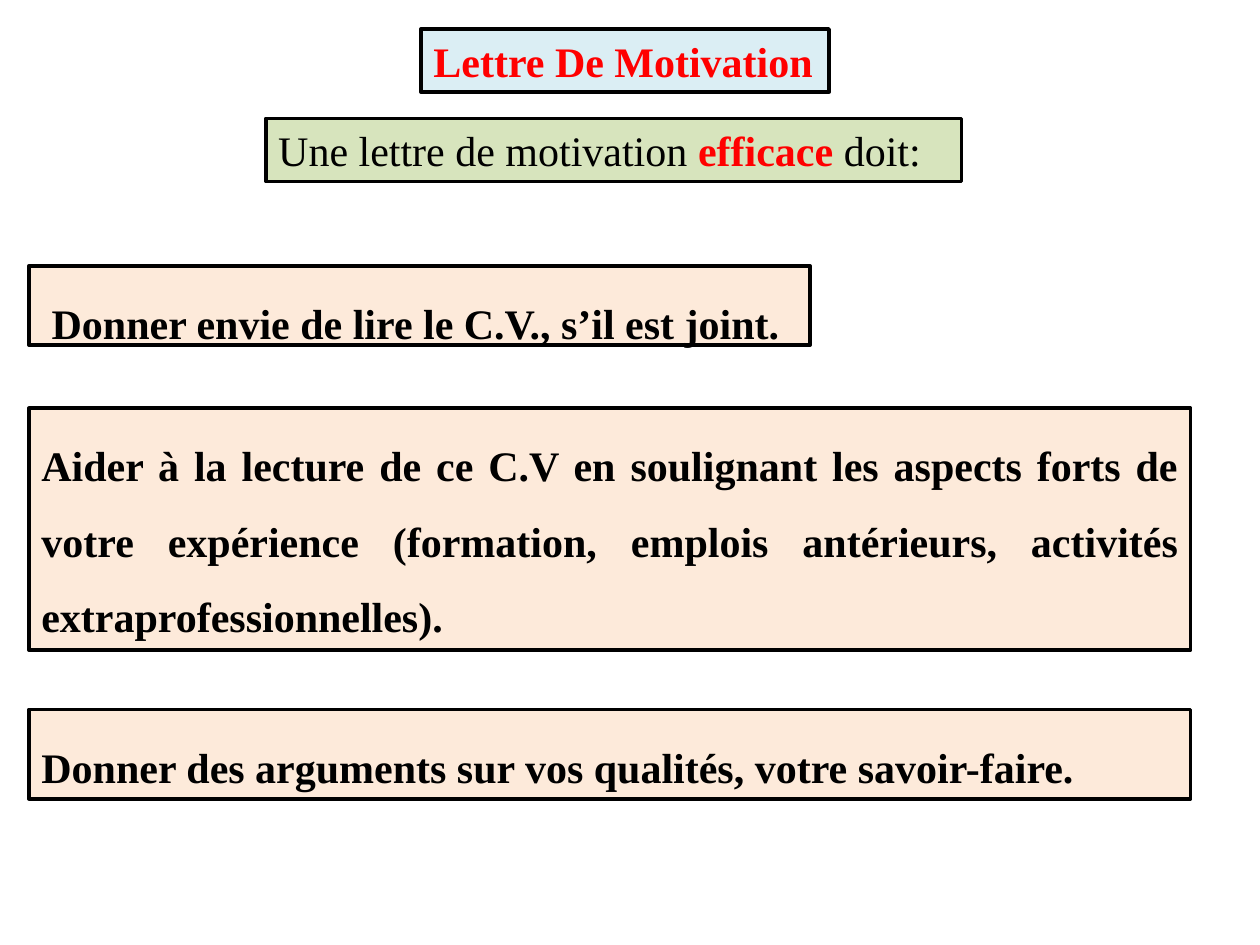
from pptx import Presentation
from pptx.dml.color import RGBColor
from pptx.enum.text import MSO_ANCHOR, MSO_AUTO_SIZE, PP_ALIGN
from pptx.util import Inches, Pt

FONT = "Times New Roman"
BLACK, RED = "000000", "FF0000"
BLUE, GREEN, PEACH = "DBEEF4", "D7E4BD", "FDEADA"
LEFT, WIDE = 0.23, 9.22
POINTS = [
    ((LEFT, 2.11, 6.2, 0.63), 0.18, MSO_ANCHOR.TOP,
     "Donner envie de lire le C.V., s’il est joint."),
    ((LEFT, 3.24, WIDE, 1.92), 0.1, MSO_ANCHOR.TOP,
     "Aider à la lecture de ce C.V en soulignant les aspects forts de votre "
     "expérience (formation, emplois antérieurs, activités extraprofessionnelles)."),
    ((LEFT, 5.63, WIDE, 0.71), 0.1, MSO_ANCHOR.MIDDLE,
     "Donner des arguments sur vos qualités, votre savoir-faire."),
]


def rgb(color):
    """Return the colour for a hex string."""
    return RGBColor.from_string(color)


def style_box(sp, box, fill, anchor=MSO_ANCHOR.MIDDLE, wrap=True):
    """Place a framed box and return its first paragraph."""
    sp.left, sp.top, sp.width, sp.height = (Inches(v) for v in box)
    sp.fill.solid()
    sp.fill.fore_color.rgb = rgb(fill)
    sp.line.color.rgb = rgb(BLACK)
    sp.line.width = Pt(2)
    tf = sp.text_frame
    tf.word_wrap = wrap
    tf.auto_size = MSO_AUTO_SIZE.NONE
    tf.vertical_anchor = anchor
    p = tf.paragraphs[0]
    p.alignment = PP_ALIGN.LEFT
    p.font.name = FONT
    p.font.size = Pt(24)
    return p


def add_text(p, text, color=BLACK, bold=False):
    """Append a run to a paragraph."""
    r = p.add_run()
    r.text = text
    r.font.color.rgb = rgb(color)
    r.font.bold = bold


def add_title(slide, box):
    """Fill the title placeholder."""
    p = style_box(slide.shapes.title, box, BLUE, wrap=False)
    add_text(p, "Lettre De Motivation", RED, True)


def add_subtitle(slide, box):
    """Add the introductory line."""
    p = style_box(slide.shapes.add_textbox(0, 0, 0, 0), box, GREEN)
    add_text(p, "Une lettre de motivation ")
    add_text(p, "efficace", RED, True)
    add_text(p, " doit:")


def add_point(slide, box, margin, anchor, text):
    """Add one justified advice box."""
    sp = slide.shapes.add_textbox(0, 0, 0, 0)
    p = style_box(sp, box, PEACH, anchor)
    sp.text_frame.margin_left = Inches(margin)
    p.alignment = PP_ALIGN.JUSTIFY
    p.line_spacing = 1.5
    add_text(p, text, bold=True)


def main():
    """Build and save the slide."""
    prs = Presentation()
    prs.slide_width, prs.slide_height = Inches(10), Inches(7.5)
    slide = prs.slides.add_slide(prs.slide_layouts[5])
    add_title(slide, (3.34, 0.23, 3.24, 0.5))
    add_subtitle(slide, (2.11, 0.94, 5.52, 0.5))
    for point in POINTS:
        add_point(slide, *point)
    prs.save("out.pptx")


if __name__ == "__main__":
    main()
